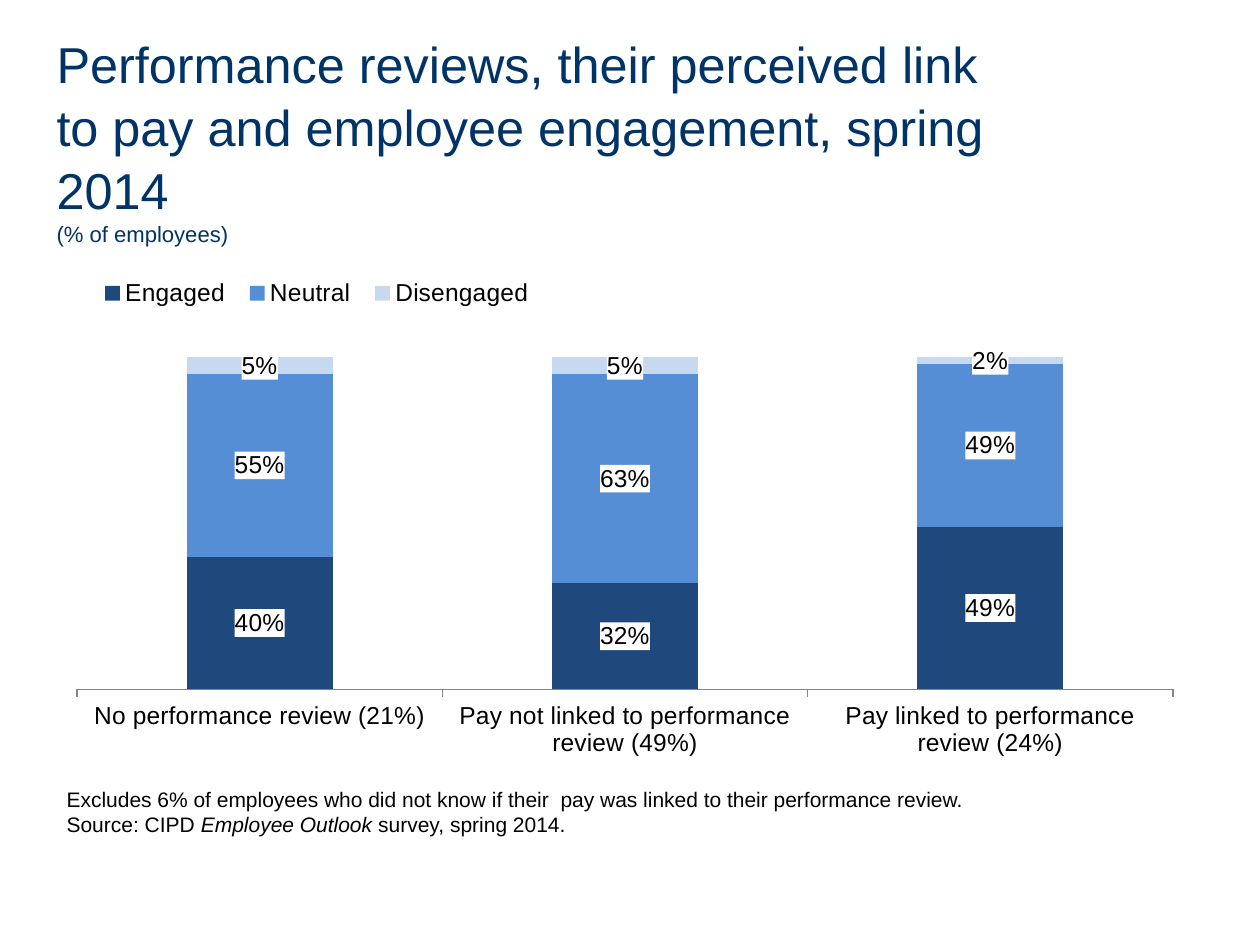
from pptx import Presentation
from pptx.chart.data import CategoryChartData
from pptx.dml.color import RGBColor
from pptx.enum.chart import XL_CHART_TYPE, XL_LEGEND_POSITION, XL_TICK_MARK
from pptx.enum.text import MSO_ANCHOR
from pptx.oxml import parse_xml
from pptx.oxml.ns import nsdecls
from pptx.util import Pt

NAVY, BLACK, WHITE, GREY = "003366", "000000", "FFFFFF", "868686"
CATS = [
    "No performance review (21%)",
    "Pay not linked to performance review (49%)",
    "Pay linked to performance review (24%)",
]
SERIES = [
    ("Engaged", (0.40, 0.32, 0.49), "1F497D"),
    ("Neutral", (0.55, 0.63, 0.49), "558ED5"),
    ("Disengaged", (0.05, 0.05, 0.02), "C6D9F1"),
]


def color(code):
    return RGBColor.from_string(code)


def style(font, size, code):
    font.name = "Arial"
    font.size = Pt(size)
    font.color.rgb = color(code)


def add_text(slide, box, wrap=True, anchor=MSO_ANCHOR.TOP):
    frame = slide.shapes.add_textbox(*map(Pt, box)).text_frame
    frame.word_wrap = wrap
    frame.vertical_anchor = anchor
    return frame


def add_title(slide):
    frame = add_text(slide, (25.2, 37.4, 572.4, 84.2), anchor=MSO_ANCHOR.MIDDLE)
    frame.text = (
        "Performance reviews, their perceived link to pay and employee "
        "engagement, spring 2014\v(% of employees)"
    )
    para = frame.paragraphs[0]
    para.line_spacing = 1.04
    for run, size in zip(para.runs, (28.8, 12.6)):
        style(run.font, size, NAVY)


def add_note(slide):
    frame = add_text(slide, (31, 445.7, 528.5, 36), wrap=False)
    frame.text = (
        "Excludes 6% of employees who did not know if their  pay was linked "
        "to their performance review."
    )
    source = frame.add_paragraph()
    for part in ("Source: CIPD ", "Employee Outlook", " survey, spring 2014."):
        source.add_run().text = part
    source.runs[1].font.italic = True
    for para in frame.paragraphs:
        for run in para.runs:
            style(run.font, 12, BLACK)


def layout(x, y, w, h, inner=False):
    target = '<c:layoutTarget val="inner"/>' if inner else ""
    return parse_xml(
        f'<c:layout {nsdecls("c")}><c:manualLayout>{target}'
        '<c:xMode val="edge"/><c:yMode val="edge"/>'
        f'<c:x val="{x}"/><c:y val="{y}"/><c:w val="{w}"/><c:h val="{h}"/>'
        "</c:manualLayout></c:layout>"
    )


def add_labels(series):
    labels = series.data_labels
    labels.show_value = True
    labels.number_format = "0%"
    labels.number_format_is_linked = False
    style(labels.font, 14, BLACK)
    fill = parse_xml(
        f'<c:spPr {nsdecls("c", "a")}><a:solidFill>'
        f'<a:srgbClr val="{WHITE}"/></a:solidFill></c:spPr>'
    )
    labels._element.find("{*}numFmt").addnext(fill)


def set_axes(chart):
    value = chart.value_axis
    value.minimum_scale, value.maximum_scale = 0, 1
    value.has_major_gridlines = False
    value.tick_labels.number_format = "0%"
    value.tick_labels.number_format_is_linked = False
    value.visible = False
    axis = chart.category_axis
    axis.major_tick_mark = XL_TICK_MARK.OUTSIDE
    axis.format.line.color.rgb = color(GREY)
    axis.format.line.width = Pt(0.75)


def set_legend(chart):
    chart.has_legend = True
    legend = chart.legend
    legend.position = XL_LEGEND_POSITION.TOP
    legend.include_in_layout = False
    legend._element.find("{*}legendPos").addnext(layout(0.03, 0.07, 0.4, 0.08))


def add_bars(slide):
    data = CategoryChartData(number_format="0%")
    data.categories = CATS
    for name, vals, _ in SERIES:
        data.add_series(name, vals)
    box = map(Pt, (31, 133.9, 652.3, 306))
    chart = slide.shapes.add_chart(XL_CHART_TYPE.COLUMN_STACKED, *box, data).chart
    chart.has_title = False
    style(chart.font, 14, BLACK)
    plot = chart.plots[0]
    plot.gap_width, plot.overlap = 150, 100
    plot.vary_by_categories = False
    for series, (_, _, code) in zip(plot.series, SERIES):
        series.format.fill.solid()
        series.format.fill.fore_color.rgb = color(code)
        add_labels(series)
    set_axes(chart)
    set_legend(chart)
    area = chart._chartSpace.chart.plotArea
    for old in area.findall("{*}layout"):
        area.remove(old)
    area.insert(0, layout(0.02, 0.23, 0.96, 0.62, inner=True))


def main():
    deck = Presentation()
    deck.slide_width, deck.slide_height = Pt(720), Pt(540)
    slide = deck.slides.add_slide(deck.slide_layouts[6])
    add_title(slide)
    add_bars(slide)
    add_note(slide)
    deck.save("out.pptx")


if __name__ == "__main__":
    main()
